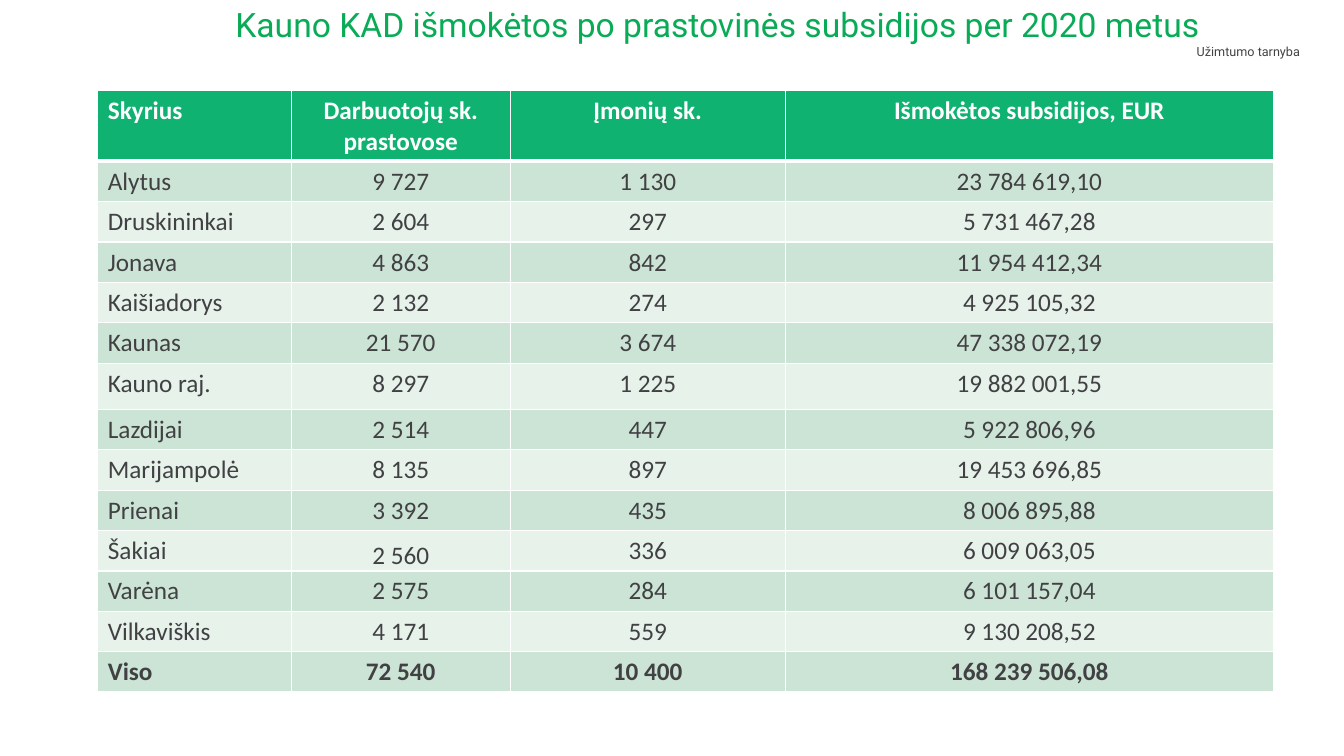
from pptx import Presentation
from pptx.dml.color import RGBColor
from pptx.enum.text import MSO_ANCHOR as Anchor, PP_ALIGN as Align
from pptx.oxml import parse_xml
from pptx.oxml.ns import nsdecls
from pptx.util import Pt

PX = 9144  # EMU per px, 100 px to the inch
WHITE, GREEN, TITLE_GREEN = "FFFFFF", "0FB271", "09AB56"
BANDS = ("CCE4D5", "E7F2EB")
CELL_GREY, AGENCY_GREY = "414144", "434244"

COLUMN_WIDTHS = (192, 217, 273, 484)
HEADER_HEIGHT, ROW_HEIGHT, TALL_ROW_HEIGHT = 62, 40, 46
HEADINGS = ("Skyrius", "Darbuotojų sk. prastovose", "Įmonių sk.",
            "Išmokėtos subsidijos, EUR")
DIVISIONS = (
    ("Alytus", "9 727", "1 130", "23 784 619,10"),
    ("Druskininkai", "2 604", "297", "5 731 467,28"),
    ("Jonava", "4 863", "842", "11 954 412,34"),
    ("Kaišiadorys", "2 132", "274", "4 925 105,32"),
    ("Kaunas", "21 570", "3 674", "47 338 072,19"),
    ("Kauno raj.", "8 297", "1 225", "19 882 001,55"),
    ("Lazdijai", "2 514", "447", "5 922 806,96"),
    ("Marijampolė", "8 135", "897", "19 453 696,85"),
    ("Prienai", "3 392", "435", "8 006 895,88"),
    ("Šakiai", "2 560", "336", "6 009 063,05"),
    ("Varėna", "2 575", "284", "6 101 157,04"),
    ("Vilkaviškis", "4 171", "559", "9 130 208,52"),
)
TOTAL = ("Viso", "72 540", "10 400", "168 239 506,08")


def px(*lengths):
    return [length * PX for length in lengths]


def color(hex_value):
    return RGBColor.from_string(hex_value)


def write(frame, text, align, font_color, **font):
    paragraph = frame.paragraphs[0]
    paragraph.alignment = align
    run = paragraph.add_run()
    run.text = text
    run.font.color.rgb = color(font_color)
    for name, value in font.items():
        setattr(run.font, name, value)
    return paragraph


def add_line_of_text(slide, box, text, align, font_color, size):
    frame = slide.shapes.add_textbox(*px(*box)).text_frame
    frame.word_wrap = True
    frame.vertical_anchor = Anchor.TOP
    return write(frame, text, align, font_color, name="Roboto", size=Pt(size))


def set_borders(cell, **widths):
    # Sides come in the order left, right, top, bottom
    for side in "LRTB":
        cell._tc.get_or_add_tcPr().append(parse_xml(
            f'<a:ln{side} {nsdecls("a")} w="{Pt(widths.get(side, 1))}">'
            f'<a:solidFill><a:srgbClr val="{WHITE}"/></a:solidFill></a:ln{side}>'))


def add_subsidy_table(slide, box):
    rows = (HEADINGS, *DIVISIONS, TOTAL)
    table = slide.shapes.add_table(len(rows), len(HEADINGS), *px(*box)).table
    for column, width in zip(table.columns, px(*COLUMN_WIDTHS)):
        column.width = width

    for r, values in enumerate(rows):
        is_header = values is HEADINGS
        height = (HEADER_HEIGHT if is_header else
                  TALL_ROW_HEIGHT if values[0] == "Kauno raj." else ROW_HEIGHT)
        table.rows[r].height = height * PX
        for c, value in enumerate(values):
            cell = table.cell(r, c)
            set_borders(cell, T=3 if r == 1 else 1, B=3 if is_header else 1)
            cell.fill.solid()
            cell.fill.fore_color.rgb = color(GREEN if is_header else BANDS[(r - 1) % 2])
            write(cell.text_frame, value, Align.CENTER if c else Align.LEFT,
                  WHITE if is_header else CELL_GREY, name="Calibri", size=Pt(18),
                  bold=is_header or values is TOTAL)

    # The Šakiai worker count sits at the foot of its cell
    sakiai_row = [values[0] for values in rows].index("Šakiai")
    sakiai_workers = table.cell(sakiai_row, 1)
    placement = dict(vertical_anchor=Anchor.BOTTOM, margin_left=PX, margin_right=PX,
                     margin_top=PX, margin_bottom=0)
    for name, value in placement.items():
        setattr(sakiai_workers, name, value)


def add_subsidy_slide(deck):
    slide = deck.slides.add_slide(deck.slide_layouts[6])
    # Agency name
    add_line_of_text(slide, (849, 39, 450, 47), "Užimtumo tarnyba",
                     Align.RIGHT, AGENCY_GREY, 9)
    # Subsidies by division
    add_subsidy_table(slide, (97, 90, sum(COLUMN_WIDTHS), 596))
    # Title
    title = add_line_of_text(
        slide, (202, 3, 1019, 128),
        "Kauno KAD išmokėtos po prastovinės subsidijos per 2020 metus",
        Align.CENTER, TITLE_GREEN, 24)
    title.line_spacing = 0.9


def main():
    deck = Presentation()
    deck.slide_width, deck.slide_height = px(1333, 750)
    add_subsidy_slide(deck)
    deck.save("out.pptx")


if __name__ == "__main__":
    main()
